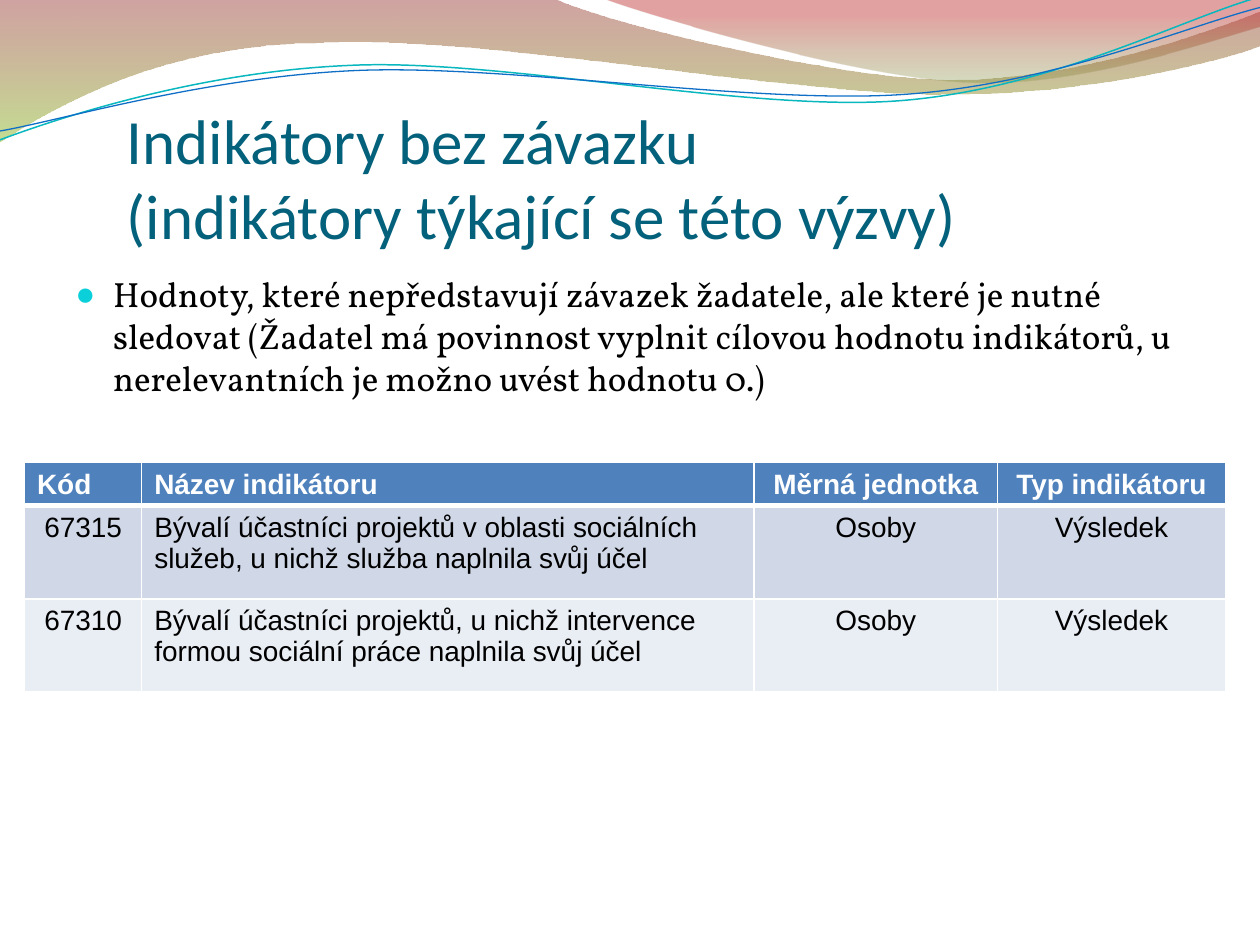
import math

from lxml import etree
from pptx import Presentation
from pptx.dml.color import RGBColor
from pptx.enum import text as tx
from pptx.oxml import ns
from pptx.util import Pt

BANDS = [
    ([(0, 0), (316.8, -0.7), (342.7, 12.2, 478.1, 45.4, 545.8, 45.4),
      (614.2, 45.4, 689.8, 18.7, 720, 6.5), (720.7, 25.9),
      (707.8, 31.7, 626.4, 54.7, 537.1, 54),
      (447.8, 54, 275, 20.2, 185, 24.5),
      (92.9, 25.2, 33.1, 59.8, -0.7, 81.4)],
     270, [(0, "973330", 45), (1, "95C238", 55)]),
    ([(344.9, -0.7), (366.5, 7.9, 491, 44.6, 553.7, 46.8),
      (616.3, 49.7, 691.9, 23, 720, 15.1), (720, 0)],
     90, [(0, "769537", 30), (0.8, "BE3330", 45)]),
]
WAVES = [
    ([(0, 79.9), (34.6, 67, 113.8, 41, 199.4, 37.4),
      (284.4, 33.1, 427, 64.1, 513.4, 57.6),
      (599.8, 51.1, 675.4, 10.8, 718.6, -1.4)],
     (359.3, 41.4), "09B7BF", 0.85),
    ([(0, 74.9), (33.8, 69.1, 118.1, 43.9, 203.8, 40.3),
      (290.2, 36.7, 429.8, 59.8, 516.2, 54),
      (601.9, 48.2, 677.5, 15.1, 720, 4.3)],
     (359.6, 42.5), "0F6FC6", 0.75),
]
TILT = 2.7
TITLE = "Indikátory bez závazku \v(indikátory týkající se této výzvy)"
BODY = ("Hodnoty, které nepředstavují závazek žadatele, ale které je nutné "
        "sledovat (Žadatel má povinnost vyplnit cílovou hodnotu indikátorů, "
        "u nerelevantních je možno uvést hodnotu 0.)")
ROWS = [
    ("Kód", "Název indikátoru", "Měrná jednotka", "Typ indikátoru"),
    ("67315", "Bývalí účastníci projektů v oblasti sociálních služeb, "
     "u nichž služba naplnila svůj účel", "Osoby", "Výsledek"),
    ("67310", "Bývalí účastníci projektů, u nichž intervence formou "
     "sociální práce naplnila svůj účel", "Osoby", "Výsledek"),
]
FILLS = ["4F81BD", "D0D8E8", "E9EDF4"]


def paint(color):
    """Turn a hex string into a colour."""
    return RGBColor.from_string(color)


def add(node, tag, **attrs):
    """Append a DrawingML element with the given attributes."""
    return etree.SubElement(node, ns.qn("a:" + tag),
                            {key: str(val) for key, val in attrs.items()})


def write(frame, text, font="Arial", size=16, color="000000", bold=False,
          center=False, bullet=None):
    """Fill a text frame with one formatted paragraph."""
    frame.word_wrap = True
    para = frame.paragraphs[0]
    para.text = text
    para.alignment = tx.PP_ALIGN.CENTER if center else tx.PP_ALIGN.LEFT
    if bullet:
        props = para._p.get_or_add_pPr()
        props.set("marL", str(Pt(21.6)))
        props.set("indent", str(-Pt(21.6)))
        add(add(props, "buClr"), "srgbClr", val=bullet)
        add(props, "buSzPct", val=95000)
        add(props, "buFont", typeface="Arial")
        add(props, "buChar", char="●")
    for run in para.runs:
        run.font.name, run.font.size, run.font.bold = font, Pt(size), bold
        run.font.color.rgb = paint(color)


def turn(point, pivot, angle):
    """Rotate a point clockwise about a pivot."""
    x, y = point[0] - pivot[0], point[1] - pivot[1]
    cos, sin = math.cos(math.radians(angle)), math.sin(math.radians(angle))
    return pivot[0] + x * cos - y * sin, pivot[1] + x * sin + y * cos


def draw(slide, box, steps, close, pivot=(0, 0), angle=0):
    """Build an outline of lines and cubic curves relative to a box."""
    pairs = [pair for step in steps for pair in zip(step[::2], step[1::2])]
    points = [(Pt(box[0] + x), Pt(box[1] + y))
              for x, y in (turn(pair, pivot, angle) for pair in pairs)]
    pen = slide.shapes.build_freeform(*points[0])
    pen.add_line_segments(points[1:], close=close)
    shape = pen.convert_to_shape()
    shape.shadow.inherit = False
    shape.rotation = -angle % 360
    legs = iter(list(shape._element.spPr.iter(ns.qn("a:lnTo"))))
    for step in steps[1:]:
        leg = next(legs)
        if len(step) == 6:
            leg.tag = ns.qn("a:cubicBezTo")
            for other in (next(legs), next(legs)):
                leg.append(other[0])
                other.getparent().remove(other)
    return shape


def header(slide, box):
    """Draw the shaded bands and the two wavy lines."""
    for steps, angle, stops in BANDS:
        shape = draw(slide, box, steps, True)
        shape.line.fill.background()
        shape.fill.gradient()
        shape.fill.gradient_angle = angle
        for stop, (place, color, alpha) in zip(shape.fill.gradient_stops, stops):
            stop.position = place
            stop.color.rgb = paint(color)
        tones = shape._element.spPr.iter(ns.qn("a:srgbClr"))
        for tone, (place, color, alpha) in zip(list(tones), stops):
            add(tone, "alpha", val=alpha * 1000)
    for steps, pivot, color, width in WAVES:
        shape = draw(slide, box, steps, False, pivot, TILT)
        shape.fill.background()
        shape.line.color.rgb = paint(color)
        shape.line.width = Pt(width)


def title(slide, box):
    """Place the slide title on the bottom of its box."""
    frame = slide.shapes.add_textbox(*map(Pt, box)).text_frame
    frame.margin_left = frame.margin_right = frame.margin_bottom = 0
    frame.vertical_anchor = tx.MSO_ANCHOR.BOTTOM
    write(frame, TITLE, font="Calibri", size=36, color="04617B")


def body(slide, box):
    """Place the bulleted explanation."""
    frame = slide.shapes.add_textbox(*map(Pt, box)).text_frame
    write(frame, BODY, font="Vollkorn", size=20, bullet="0BD0D9")


def edge(cell, base):
    """Give a cell white borders with the given bottom width."""
    props = cell._tc.get_or_add_tcPr()
    for tag, width in (("lnL", 1), ("lnR", 1), ("lnT", 1), ("lnB", base)):
        line = add(props, tag, w=Pt(width))
        add(add(line, "solidFill"), "srgbClr", val="FFFFFF")


def grid(slide, box):
    """Place the table of indicators."""
    table = slide.shapes.add_table(len(ROWS), 4, *map(Pt, box)).table
    for col, width in zip(table.columns, (67, 350, 139, 130.4)):
        col.width = Pt(width)
    for row, high in zip(table.rows, (19.4, 53.3, 53.3)):
        row.height = Pt(high)
    for r, row in enumerate(ROWS):
        head = r == 0
        for c, value in enumerate(row):
            cell = table.cell(r, c)
            edge(cell, 3 if head else 1)
            if head:
                cell.margin_top, cell.margin_bottom = Pt(4.2), Pt(1.3)
            cell.fill.solid()
            cell.fill.fore_color.rgb = paint(FILLS[r])
            write(cell.text_frame, value, bold=head,
                  color="FFFFFF" if head else "000000",
                  center=c > 1 or (c == 0 and not head))


def main():
    """Build and save the slide."""
    deck = Presentation()
    deck.slide_width, deck.slide_height = Pt(720), Pt(540)
    slide = deck.slides.add_slide(deck.slide_layouts[6])
    header(slide, (0, 0))
    title(slide, (72.4, 71.6, 648, 72.7))
    body(slide, (36, 152.2, 648, 345.6))
    grid(slide, (14, 264.2, 686.4, 126))
    deck.save("out.pptx")


if __name__ == "__main__":
    main()
